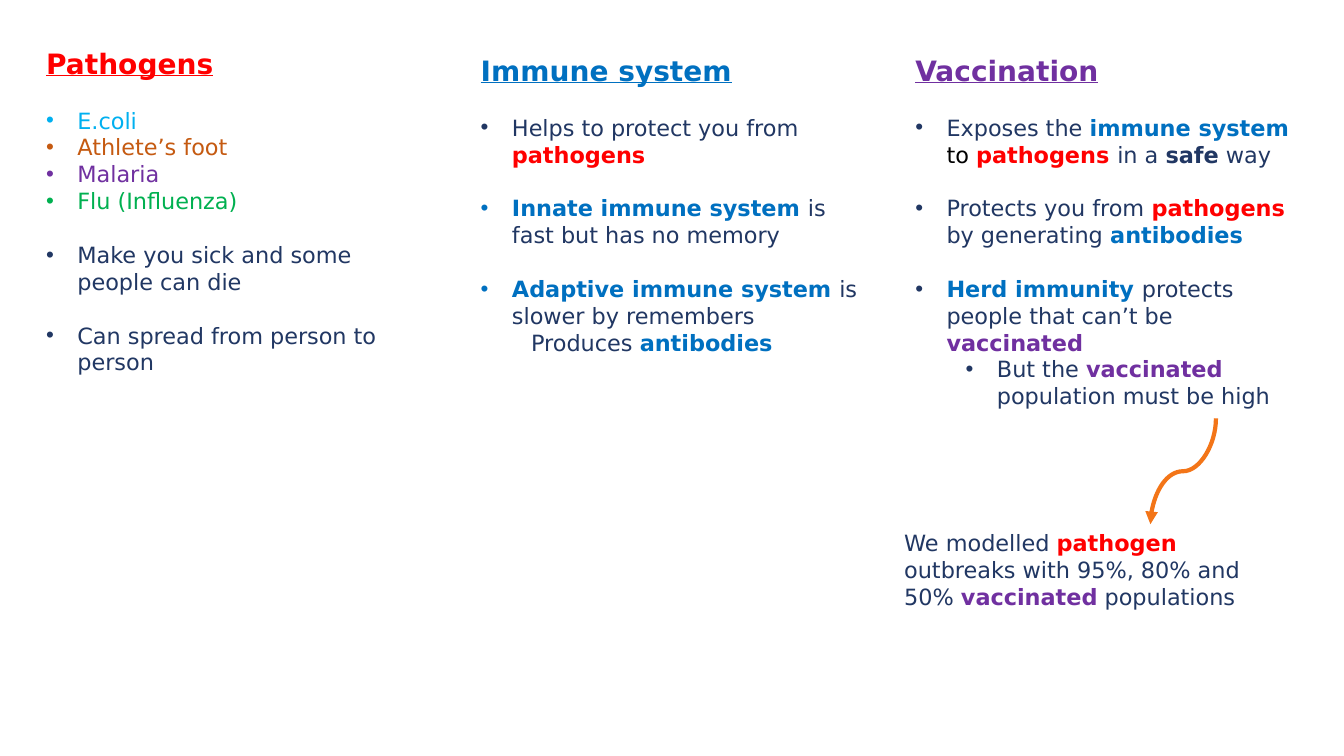
from lxml.etree import SubElement
from pptx import Presentation
from pptx.dml.color import RGBColor
from pptx.enum.shapes import MSO_CONNECTOR as Link, MSO_SHAPE as Shape
from pptx.enum.text import MSO_ANCHOR as Anchor, MSO_AUTO_SIZE as Fit, PP_ALIGN as Align
from pptx.oxml.ns import qn
from pptx.util import Inches, Pt

FONT = "DejaVu Sans"
GAP = Pt(19.2)
HANG = 0.31
COLORS = {
    "white": "FFFFFF", "black": "000000", "navy": "213763", "red": "FF0000",
    "blue": "0070C0", "sky": "00B0F0", "brown": "C55A11", "purple": "7030A0",
    "green": "00B050", "orange": "F37518",
}


def rgb(name):
    return RGBColor.from_string(COLORS[name])


def add_box(slide, left, top, width, height):
    box = slide.shapes.add_shape(
        Shape.RECTANGLE, Inches(left), Inches(top), Inches(width), Inches(height))
    box.shadow.inherit = False
    box.fill.solid()
    box.fill.fore_color.rgb = rgb("white")
    box.line.fill.background()
    frame = box.text_frame
    frame.word_wrap = True
    frame.auto_size = Fit.SHAPE_TO_FIT_TEXT
    frame.vertical_anchor = Anchor.TOP
    return frame


def add_runs(para, parts, size=16):
    """Write plain strings in navy, and (text, colour[, bold]) parts bold by default."""
    para.alignment = Align.LEFT
    for part in parts:
        if isinstance(part, str):
            part = (part, "navy", False)
        text, color, bold = part if len(part) == 3 else (*part, True)
        run = para.add_run()
        run.text = text
        font = run.font
        font.name, font.size, font.bold = FONT, Pt(size), bold
        font.color.rgb = rgb(color)


def indent(para, left, bullet=True, color=None):
    props = para._p.get_or_add_pPr()
    props.set("marL", str(Inches(left)))
    props.set("indent", str(Inches(-HANG if bullet else 0)))
    if bullet:
        if color:
            tint = SubElement(props, qn("a:buClr"))
            SubElement(tint, qn("a:srgbClr"), val=COLORS[color])
        SubElement(props, qn("a:buFont"), typeface="Arial")
        SubElement(props, qn("a:buChar"), char="•")


def add_topic(slide, place, title, color, groups):
    """Add a heading and groups of bullets, with a gap before each group."""
    frame = add_box(slide, *place)
    head = frame.paragraphs[0]
    add_runs(head, [(title, color)], 20)
    head.runs[0].font.underline = True
    for group in groups:
        for index, (parts, style) in enumerate(group):
            para = frame.add_paragraph()
            if index == 0:
                para.space_before = GAP
            para.level = style.get("level", 0)
            indent(para, style.get("left", HANG), style.get("bullet", True),
                   style.get("color"))
            add_runs(para, parts)


def add_arrow(slide, left, top, width, height):
    """Add a curved arrow, turned a quarter so that it runs downwards."""
    arrow = slide.shapes.add_connector(
        Link.CURVE, Inches(left), Inches(top),
        Inches(left + width), Inches(top + height))
    arrow.line.color.rgb = rgb("orange")
    arrow.line.width = Pt(3)
    props = arrow._element.spPr
    props.find(qn("a:xfrm")).set("rot", str(90 * 60000))
    SubElement(props.find(qn("a:ln")), qn("a:tailEnd"), type="triangle")
    SubElement(props, qn("a:effectLst"))


def item(*parts, **style):
    return parts, style


def main():
    deck = Presentation()
    deck.slide_width, deck.slide_height = Inches(13.33), Inches(7.5)
    slide = deck.slides.add_slide(deck.slide_layouts[6])

    add_topic(slide, (0.36, 0.41, 4, 3.4), "Pathogens", "red", [
        [item(("E.coli", "sky", False)),
         item(("Athlete’s foot", "brown", False)),
         item(("Malaria", "purple", False)),
         item(("Flu (Influenza)", "green", False))],
        [item("Make you sick and some people can die")],
        [item("Can spread from person to person")],
    ])
    add_topic(slide, (4.67, 0.48, 4, 3.13), "Immune system", "blue", [
        [item("Helps to protect you from ", ("pathogens", "red"))],
        [item(("Innate immune system ", "blue"), "is fast but has no memory")],
        [item(("Adaptive immune system ", "blue"), "is slower by remembers"),
         item("Produces ", ("antibodies", "blue"), level=1, left=0.5, bullet=False)],
    ])
    add_topic(slide, (8.98, 0.48, 4, 3.67), "Vaccination", "purple", [
        [item("Exposes the ", ("immune system", "blue"), (" to ", "black", False),
              ("pathogens ", "red"), "in a ", ("safe", "navy"), " way")],
        [item("Protects you from ", ("pathogens ", "red"), "by generating ",
              ("antibodies", "blue"))],
        [item(("Herd immunity ", "blue"), "protects people that can’t be ",
              ("vaccinated", "purple"), color="navy"),
         item("But the ", ("vaccinated ", "purple"), "population must be high",
              level=1, left=0.81)],
    ])
    note = add_box(slide, 8.87, 5.2, 3.74, 0.91)
    add_runs(note.paragraphs[0], [
        "We modelled ", ("pathogen", "red"), " outbreaks with 95%, 80% and 50% ",
        ("vaccinated", "purple"), " populations"])
    add_arrow(slide, 11.21, 4.35, 1.05, 0.65)
    deck.save("out.pptx")


if __name__ == "__main__":
    main()
